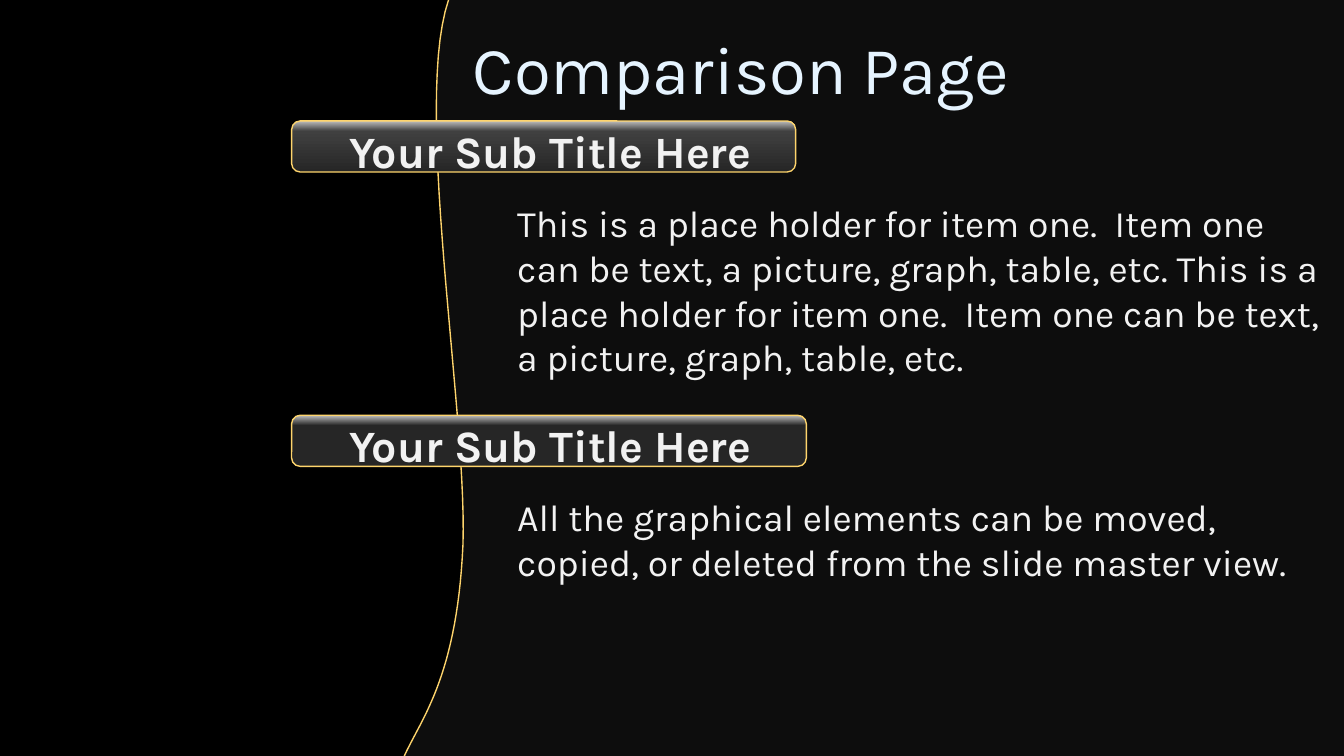
from copy import deepcopy

from pptx import Presentation
from pptx.dml.color import RGBColor
from pptx.enum.shapes import MSO_SHAPE
from pptx.enum.text import MSO_ANCHOR
from pptx.util import Inches, Pt

ROUND_RECT = MSO_SHAPE.ROUNDED_RECTANGLE
TOP, MIDDLE, BOTTOM = MSO_ANCHOR.TOP, MSO_ANCHOR.MIDDLE, MSO_ANCHOR.BOTTOM

GOLD = "FED46C"
TITLE = {"size": Pt(36), "bold": False, "color": "E6F4FF"}
SUBTITLE = {"size": Pt(24), "bold": True, "color": "F2F2F2"}
BODY = {"size": Pt(20), "bold": False, "color": "F2F2F2"}

EDGE_START = (2.99, 5.67)
EDGE_CURVES = [
    [(3.1, 5.39), (3.38, 5.11), (3.44, 4.15)],
    [(3.51, 3.2), (3.03, 0.63), (3.37, -0.08)],
]
PANEL_CORNERS = [(10.24, -0.09), (10.25, 5.68)]

ITEM = "This is a place holder for item one.  Item one can be text, a picture, graph, table, etc."
SECTIONS = [
    (0.9, 3.75, "404040", " ".join([ITEM, ITEM])),
    (3.09, 3.83, "262626",
     "All the graphical elements can be moved, copied, or deleted from the slide master view."),
]


def rgb(value):
    return RGBColor.from_string(value)


def bezier(start, c1, c2, end, steps=30):
    points = []
    for i in range(1, steps + 1):
        t = i / steps
        weights = ((1 - t) ** 3, 3 * t * (1 - t) ** 2, 3 * t * t * (1 - t), t ** 3)
        points.append(tuple(
            sum(w * c for w, c in zip(weights, axis))
            for axis in zip(start, c1, c2, end)
        ))
    return points


class Deck:
    font = "Karla"

    def __init__(self, width, height, background):
        self.prs = Presentation()
        self.prs.slide_width = Inches(width)
        self.prs.slide_height = Inches(height)
        self.s = self.prs.slides.add_slide(self.prs.slide_layouts[6])
        fill = self.s.background.fill
        fill.solid()
        fill.fore_color.rgb = rgb(background)

    def outline(self, sp):
        sp.shadow.inherit = False
        sp.line.color.rgb = rgb(GOLD)
        sp.line.width = Pt(0.75)

    def panel(self, start, curves, corners, color):
        points = [start]
        for curve in curves:
            points += bezier(points[-1], *curve)
        points += corners
        emu = [(Inches(x), Inches(y)) for x, y in points]
        builder = self.s.shapes.build_freeform(*emu[0])
        builder.add_line_segments(emu[1:], close=True)
        sp = builder.convert_to_shape()
        sp.fill.solid()
        sp.fill.fore_color.rgb = rgb(color)
        self.outline(sp)

    def bar(self, x, y, w, h, colors):
        sp = self.s.shapes.add_shape(ROUND_RECT, Inches(x), Inches(y), Inches(w), Inches(h))
        sp.fill.gradient()
        sp.fill.gradient_angle = 90
        first = sp.fill.gradient_stops[0]._gs
        first.addnext(deepcopy(first))
        for stop, position, color in zip(sp.fill.gradient_stops, (0, 0.8, 1), colors):
            stop.position = position
            stop.color.rgb = rgb(color)
        self.outline(sp)

    def text(self, x, y, w, h, text, style, anchor):
        sp = self.s.shapes.add_textbox(Inches(x), Inches(y), Inches(w), Inches(h))
        tf = sp.text_frame
        tf.word_wrap = True
        tf.vertical_anchor = anchor
        r = tf.paragraphs[0].add_run()
        r.text = text
        r.font.name = self.font
        for name, value in style.items():
            if name == "color":
                r.font.color.rgb = rgb(value)
            else:
                setattr(r.font, name, value)


def main():
    deck = Deck(10, 10 * 9 / 16, "000000")
    deck.panel(EDGE_START, EDGE_CURVES, PANEL_CORNERS, "0D0D0D")
    for top, width, middle, body in SECTIONS:
        deck.bar(2.17, top, width, 0.38, ("262626", middle, "BFBFBF"))
        deck.text(2.5, top - 0.05, 3.5, 0.52, "Your Sub Title Here", SUBTITLE, BOTTOM)
        deck.text(3.75, top + 0.54, 6.25, 3.24, body, BODY, TOP)
    deck.text(3.42, 0.12, 7.08, 0.77, "Comparison Page", TITLE, MIDDLE)
    deck.prs.save("out.pptx")


if __name__ == "__main__":
    main()
